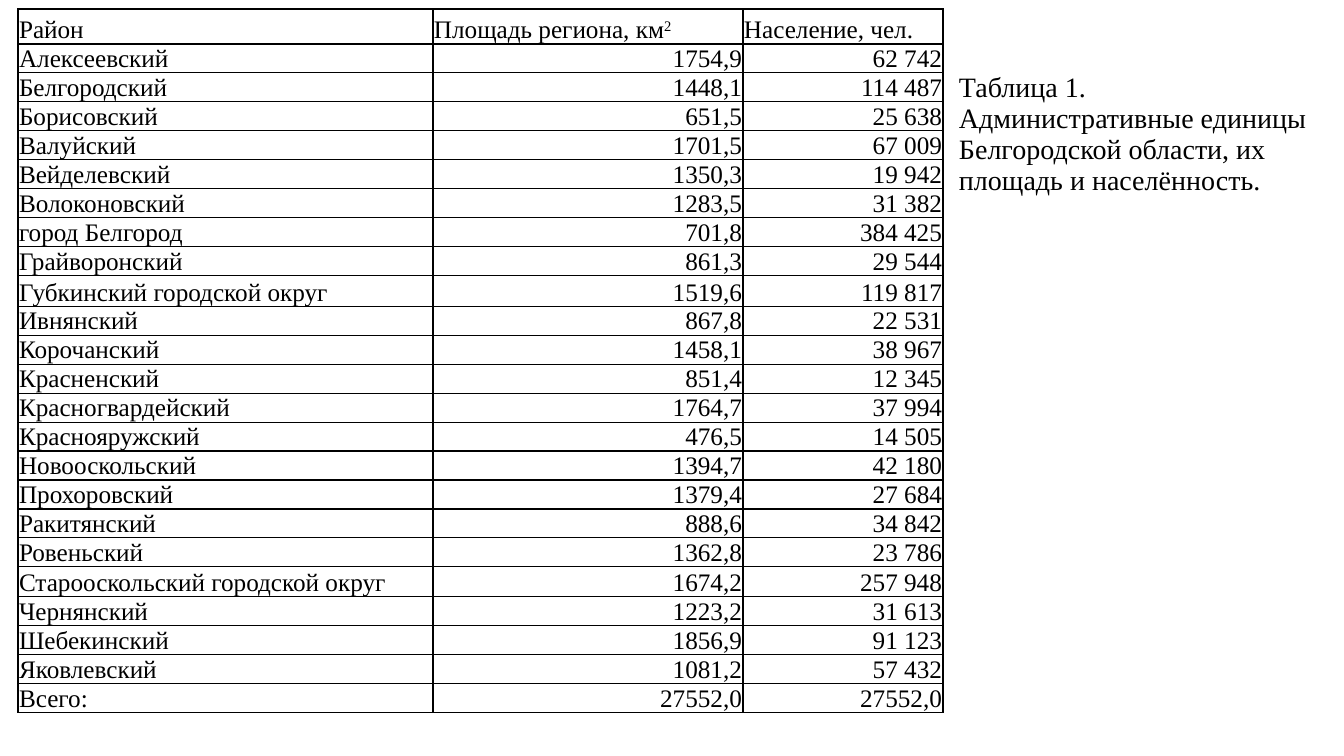
from lxml import etree
from pptx import Presentation
from pptx import util as u
from pptx.dml.color import RGBColor
from pptx.enum import text
from pptx.oxml.ns import qn

PX = 914400 / 100.8
COLORS = {"ink": "000000", "paper": "FFFFFF"}
FONT = "Times New Roman"

HEADER = ("Район", "Площадь региона, км", "Население, чел.")
DISTRICTS = [
    ("Алексеевский", "1754,9", "62 742"),
    ("Белгородский", "1448,1", "114 487"),
    ("Борисовский", "651,5", "25 638"),
    ("Валуйский", "1701,5", "67 009"),
    ("Вейделевский", "1350,3", "19 942"),
    ("Волоконовский", "1283,5", "31 382"),
    ("город Белгород", "701,8", "384 425"),
    ("Грайворонский", "861,3", "29 544"),
    ("Губкинский городской округ", "1519,6", "119 817"),
    ("Ивнянский", "867,8", "22 531"),
    ("Корочанский", "1458,1", "38 967"),
    ("Красненский", "851,4", "12 345"),
    ("Красногвардейский", "1764,7", "37 994"),
    ("Краснояружский", "476,5", "14 505"),
    ("Новооскольский", "1394,7", "42 180"),
    ("Прохоровский", "1379,4", "27 684"),
    ("Ракитянский", "888,6", "34 842"),
    ("Ровеньский", "1362,8", "23 786"),
    ("Старооскольский городской округ", "1674,2", "257 948"),
    ("Чернянский", "1223,2", "31 613"),
    ("Шебекинский", "1856,9", "91 123"),
    ("Яковлевский", "1081,2", "57 432"),
    ("Всего:", "27552,0", "27552,0"),
]
ROWS = [HEADER] + DISTRICTS
COLUMN_WIDTHS = (415, 310, 200)
ROW_HEIGHT = 24
TALL_ROWS = {0: 35, 9: 31, 19: 30}
CAPTION = "Таблица 1. Административные единицы Белгородской области, их площадь и населённость."


def add_plain_table(slide, left, top, widths, heights):
    lengths = [round(value * PX) for value in (left, top, sum(widths), sum(heights))]
    table = slide.shapes.add_table(len(heights), len(widths), *lengths).table
    table.first_row = False
    table.horz_banding = False
    for column, width in zip(table.columns, widths):
        column.width = round(width * PX)
    for row, height in zip(table.rows, heights):
        row.height = round(height * PX)
    return table


def format_cell(cell, size, border):
    cell.vertical_anchor = text.MSO_ANCHOR.BOTTOM
    cell.margin_left = cell.margin_right = cell.margin_top = round(PX)
    cell.margin_bottom = 0
    cell.fill.background()
    properties = cell._tc.get_or_add_tcPr()
    for position, side in enumerate(("lnL", "lnR", "lnT", "lnB")):
        line = etree.Element(qn(f"a:{side}"), w=str(u.Pt(1)))
        fill = etree.SubElement(line, qn("a:solidFill"))
        etree.SubElement(fill, qn("a:srgbClr"), val=border)
        properties.insert(position, line)
    for run in cell.text_frame.paragraphs[0].runs:
        run.font.name = FONT
        run.font.size = u.Pt(size)
        run.font.color.rgb = RGBColor.from_string(COLORS["ink"])


presentation = Presentation()
presentation.slide_width = round(1344 * PX)
presentation.slide_height = round(756 * PX)
slide = presentation.slides.add_slide(presentation.slide_layouts[6])

heights = [TALL_ROWS.get(index, ROW_HEIGHT) for index in range(len(ROWS))]
districts = add_plain_table(slide, 18, 9, COLUMN_WIDTHS, heights)
for row_index, values in enumerate(ROWS):
    for column_index, value in enumerate(values):
        cell = districts.cell(row_index, column_index)
        cell.text_frame.text = value
        paragraph = cell.text_frame.paragraphs[0]
        if row_index and column_index:
            paragraph.alignment = text.PP_ALIGN.RIGHT
        if (row_index, column_index) == (0, 1):
            exponent = paragraph.add_run()
            exponent.text = "2"
            exponent._r.get_or_add_rPr().set("baseline", "30000")
        format_cell(cell, 18, COLORS["ink"])

caption = add_plain_table(slide, 958, 32, [354], [165]).cell(0, 0)
caption.text_frame.text = CAPTION
format_cell(caption, 20, COLORS["paper"])

presentation.save("out.pptx")
